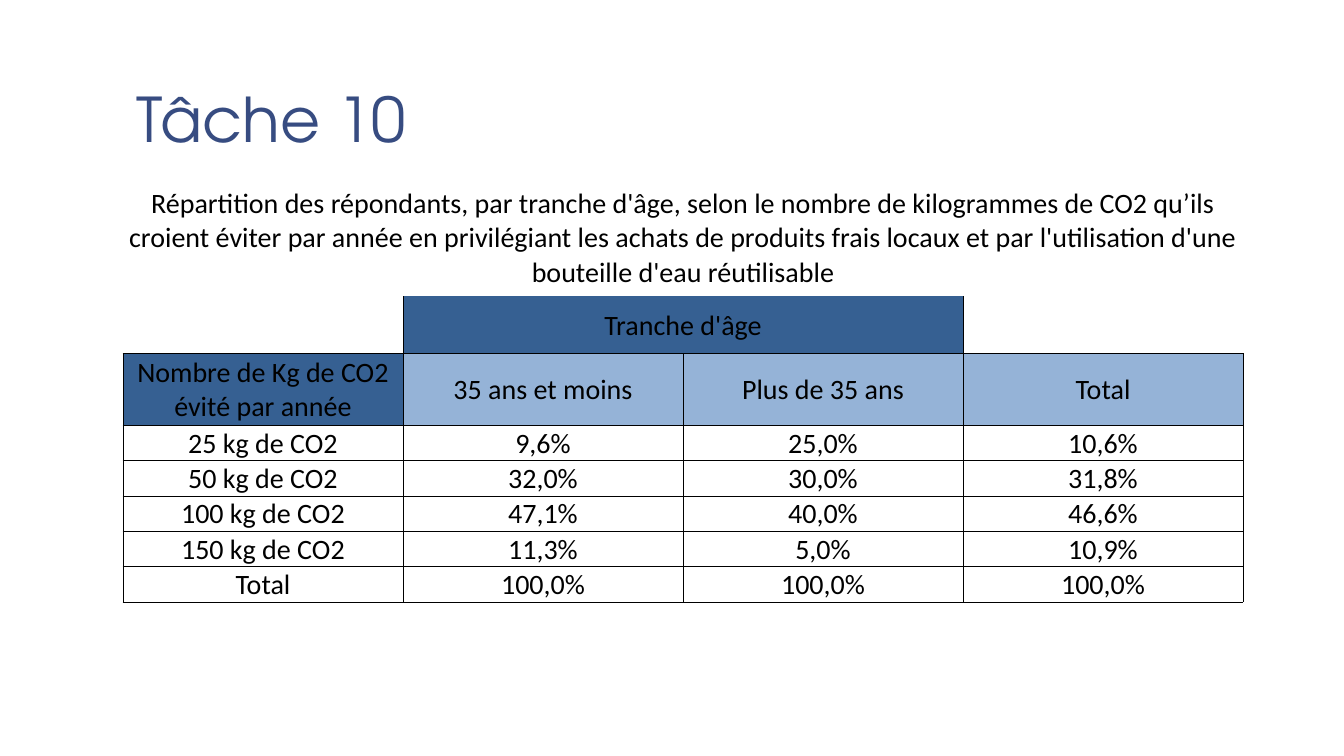
from pptx import Presentation
from pptx.dml.color import RGBColor
from pptx.enum.text import MSO_ANCHOR, MSO_AUTO_SIZE, PP_ALIGN
from pptx.oxml.ns import qn
from pptx.util import Inches, Pt
from lxml import etree

LEFT, CENTER = PP_ALIGN.LEFT, PP_ALIGN.CENTER
MIDDLE, BOTTOM = MSO_ANCHOR.MIDDLE, MSO_ANCHOR.BOTTOM
NO_AUTOFIT = MSO_AUTO_SIZE.NONE
TITLE_ONLY = 5

BLACK, WHITE, NAVY = "000000", "FFFFFF", "374C81"
DARK_BLUE, LIGHT_BLUE = "366092", "95B3D7"

CAPTION = (
    "Répartition des répondants, par tranche d'âge, selon le nombre de kilogrammes "
    "de CO2 qu’ils croient éviter par année en privilégiant les achats de produits "
    "frais locaux et par l'utilisation d'une bouteille d'eau réutilisable"
)
ROWS = [
    [CAPTION, "", "", ""],
    ["", "Tranche d'âge", "", ""],
    ["Nombre de Kg de CO2 évité par année", "35 ans et moins", "Plus de 35 ans", "Total"],
    ["25 kg de CO2", "9,6%", "25,0%", "10,6%"],
    ["50 kg de CO2", "32,0%", "30,0%", "31,8%"],
    ["100 kg de CO2", "47,1%", "40,0%", "46,6%"],
    ["150 kg de CO2", "11,3%", "5,0%", "10,9%"],
    ["Total", "100,0%", "100,0%", "100,0%"],
]
ROW_HEIGHTS = [1.16, 0.57, 0.71] + [0.35] * 5
FILLS = {
    1: [None, DARK_BLUE, DARK_BLUE, None],
    2: [DARK_BLUE] + [LIGHT_BLUE] * 3,
    **{row: [WHITE] * 4 for row in range(3, 7)},
}
EDGES = {0: [""] * 4, 1: ["RB", "LRB", "RB", "LB"]}


def color(value):
    """Return the colour for a hex string."""
    return RGBColor.from_string(value)


def add_text(para, text, size, font, value):
    """Add one formatted run to a paragraph."""
    span = para.add_run()
    span.text = text
    span.font.size = Pt(size)
    span.font.name = font
    span.font.color.rgb = color(value)


def set_borders(cell, edges):
    """Draw thin black lines on the named edges and none on the others."""
    properties = cell._tc.get_or_add_tcPr()
    for edge in "LRTB":
        line = etree.SubElement(properties, qn(f"a:ln{edge}"), w=str(Pt(0.5)))
        if edge in edges:
            fill = etree.SubElement(line, qn("a:solidFill"))
            etree.SubElement(fill, qn("a:srgbClr"), val=BLACK)
        else:
            etree.SubElement(line, qn("a:noFill"))


def format_cell(cell, text, fill, edges):
    """Set the borders, fill, margins and text of one cell."""
    set_borders(cell, edges)
    if fill:
        cell.fill.solid()
        cell.fill.fore_color.rgb = color(fill)
    else:
        cell.fill.background()
    cell.margin_left = cell.margin_right = cell.margin_top = Inches(0.01)
    cell.margin_bottom = 0
    cell.vertical_anchor = MIDDLE
    if text:
        para = cell.text_frame.paragraphs[0]
        para.alignment = CENTER
        add_text(para, text, 20, "Calibri", BLACK)


def place_title(page, left, top, width, height):
    """Move and format the title placeholder."""
    title = page.shapes.title
    title.left, title.top = Inches(left), Inches(top)
    title.width, title.height = Inches(width), Inches(height)
    frame = title.text_frame
    frame.word_wrap = True
    frame.auto_size = NO_AUTOFIT
    frame.vertical_anchor = BOTTOM
    frame.margin_left = frame.margin_right = Inches(0.13)
    frame.margin_top = frame.margin_bottom = Inches(0.07)
    para = frame.paragraphs[0]
    para.alignment = LEFT
    para.line_spacing = 0.85
    add_text(para, "Tâche 10", 44, "TeX Gyre Adventor", NAVY)


def place_table(page, left, top, width):
    """Add the table of answers by age group."""
    columns = len(ROWS[0])
    table = page.shapes.add_table(
        len(ROWS), columns, Inches(left), Inches(top),
        Inches(width), Inches(sum(ROW_HEIGHTS)),
    ).table
    table.first_row = table.horz_banding = False
    for row, height in zip(table.rows, ROW_HEIGHTS):
        row.height = Inches(height)
    for row, texts in enumerate(ROWS):
        fills = FILLS.get(row, [None] * columns)
        edges = EDGES.get(row, ["LRTB"] * columns)
        for column, text in enumerate(texts):
            format_cell(table.cell(row, column), text, fills[column], edges[column])
    table.cell(0, 0).merge(table.cell(0, columns - 1))
    table.cell(1, 1).merge(table.cell(1, 2))


def main():
    """Build and save the deck."""
    deck = Presentation()
    deck.slide_width, deck.slide_height = Inches(13.33), Inches(7.5)
    page = deck.slides.add_slide(deck.slide_layouts[TITLE_ONLY])
    place_title(page, 1.22, 0.08, 11.11, 1.53)
    place_table(page, 1.22, 1.78, 11.11)
    deck.save("out.pptx")


if __name__ == "__main__":
    main()
